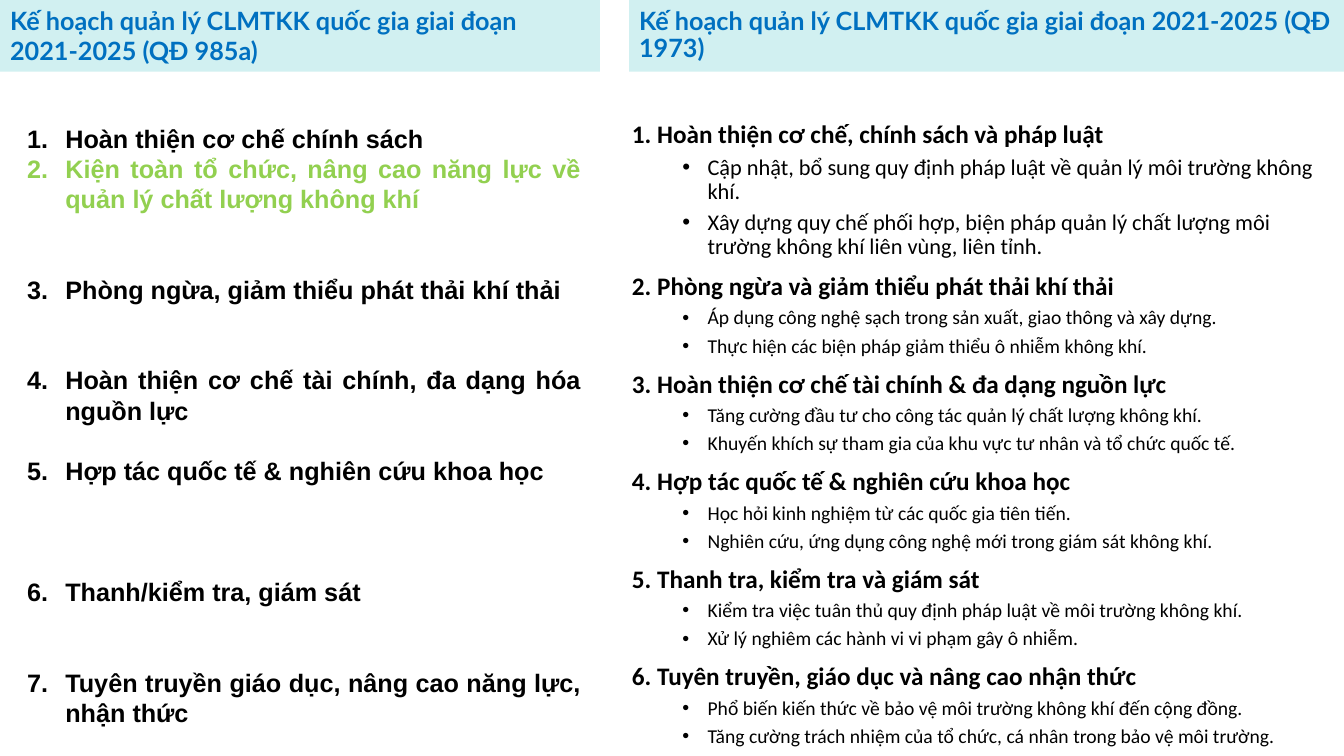
from dataclasses import dataclass

from lxml.etree import SubElement
from pptx import Presentation
from pptx.dml.color import RGBColor
from pptx.enum.shapes import MSO_SHAPE as Preset
from pptx.enum.text import MSO_ANCHOR as Anchor, MSO_AUTO_SIZE as AutoSize, PP_ALIGN as Align
from pptx.oxml.ns import qn
from pptx.util import Inches, Pt

OLD_TITLE = "Kế hoạch quản lý CLMTKK quốc gia giai đoạn 2021-2025 (QĐ 985a)"
NEW_TITLE = "Kế hoạch quản lý CLMTKK quốc gia giai đoạn 2021-2025 (QĐ 1973)"

OLD_TASKS = [
    {"text": "Hoàn thiện cơ chế chính sách", "gap_rows": 0},
    {"text": "Kiện toàn tổ chức, nâng cao năng lực về quản lý chất lượng không khí",
     "gap_rows": 0, "highlight": True},
    {"text": "Phòng ngừa, giảm thiểu phát thải khí thải", "gap_rows": 2},
    {"text": "Hoàn thiện cơ chế tài chính, đa dạng hóa nguồn lực", "gap_rows": 2},
    {"text": "Hợp tác quốc tế & nghiên cứu khoa học", "gap_rows": 1},
    {"text": "Thanh/kiểm tra, giám sát", "gap_rows": 3},
    {"text": "Tuyên truyền giáo dục, nâng cao năng lực, nhận thức", "gap_rows": 2},
]

NEW_TASKS = [
    ("1. Hoàn thiện cơ chế, chính sách và pháp luật", [
        "Cập nhật, bổ sung quy định pháp luật về quản lý môi trường không khí.",
        "Xây dựng quy chế phối hợp, biện pháp quản lý chất lượng môi trường không khí liên vùng, liên tỉnh.",
    ]),
    ("2. Phòng ngừa và giảm thiểu phát thải khí thải", [
        "Áp dụng công nghệ sạch trong sản xuất, giao thông và xây dựng.",
        "Thực hiện các biện pháp giảm thiểu ô nhiễm không khí.",
    ]),
    ("3. Hoàn thiện cơ chế tài chính & đa dạng nguồn lực", [
        "Tăng cường đầu tư cho công tác quản lý chất lượng không khí.",
        "Khuyến khích sự tham gia của khu vực tư nhân và tổ chức quốc tế.",
    ]),
    ("4. Hợp tác quốc tế & nghiên cứu khoa học", [
        "Học hỏi kinh nghiệm từ các quốc gia tiên tiến.",
        "Nghiên cứu, ứng dụng công nghệ mới trong giám sát không khí.",
    ]),
    ("5. Thanh tra, kiểm tra và giám sát", [
        "Kiểm tra việc tuân thủ quy định pháp luật về môi trường không khí.",
        "Xử lý nghiêm các hành vi vi phạm gây ô nhiễm.",
    ]),
    ("6. Tuyên truyền, giáo dục và nâng cao nhận thức", [
        "Phổ biến kiến thức về bảo vệ môi trường không khí đến cộng đồng.",
        "Tăng cường trách nhiệm của tổ chức, cá nhân trong bảo vệ môi trường.",
    ]),
]


@dataclass(frozen=True)
class Theme:
    band: str = "D1F0F1"
    title: str = "0070C0"
    text: str = "000000"
    highlight: str = "92D050"
    title_font: str = "Lato"
    old_font: str = "Arial"
    new_font: str = "Calibri"
    heading_size: int = 18
    first_detail_size: int = 16
    detail_size: int = 14
    row_height: float = 21.6


THEME = Theme()
WIDTH, HEIGHT = 13.33, 7.5
BAND_HEIGHT = 0.71
OLD_BAND = (0, 0, 5.95, BAND_HEIGHT)
NEW_BAND = (6.24, 0, WIDTH - 6.24, BAND_HEIGHT)
OLD_LIST = (0.17, 1.17, 5.69, 6.16)
NEW_LIST = (6.17, 1.16, WIDTH - 6.17, 4.76)


def write(frame, text, *, font, size, color, bold=True, align=Align.LEFT,
          spacing=1.0, before=0, indent=0, hanging=0, bullet=None):
    first = not frame.text
    paragraph = frame.paragraphs[0] if first else frame.add_paragraph()
    properties = paragraph._p.get_or_add_pPr()
    properties.set("marL", str(Inches(indent)))
    properties.set("indent", str(Inches(-hanging)))
    if bullet == "number":
        SubElement(properties, qn("a:buFont"), typeface="+mj-lt")
        SubElement(properties, qn("a:buAutoNum"), type="arabicPeriod")
    elif bullet:
        SubElement(properties, qn("a:buFont"), typeface="Arial")
        SubElement(properties, qn("a:buChar"), char=bullet)
    else:
        SubElement(properties, qn("a:buNone"))
    paragraph.alignment = align
    paragraph.line_spacing = spacing
    paragraph.space_before = Pt(0 if first else before)
    run = paragraph.add_run()
    run.text = text
    run.font.name = font
    run.font.size = Pt(size)
    run.font.bold = bold
    run.font.color.rgb = RGBColor.from_string(color)


def fill_band(shape, text, spacing):
    shape.fill.solid()
    shape.fill.fore_color.rgb = RGBColor.from_string(THEME.band)
    shape.line.fill.background()
    frame = shape.text_frame
    frame.word_wrap = True
    frame.auto_size = AutoSize.NONE
    frame.vertical_anchor = Anchor.MIDDLE
    write(frame, text, font=THEME.title_font, size=THEME.heading_size,
          color=THEME.title, spacing=spacing)


def add_list_frame(slide, box):
    frame = slide.shapes.add_textbox(*map(Inches, box)).text_frame
    frame.word_wrap = True
    return frame


def add_old_tasks(slide):
    frame = add_list_frame(slide, OLD_LIST)
    for task in OLD_TASKS:
        write(frame, task["text"], font=THEME.old_font, size=THEME.heading_size,
              color=THEME.highlight if task.get("highlight") else THEME.text,
              align=Align.JUSTIFY, spacing=Pt(THEME.row_height),
              before=task["gap_rows"] * THEME.row_height,
              indent=0.38, hanging=0.38, bullet="number")


def add_new_tasks(slide):
    frame = add_list_frame(slide, NEW_LIST)
    for index, (heading, details) in enumerate(NEW_TASKS):
        write(frame, heading, font=THEME.new_font, size=THEME.heading_size,
              color=THEME.text, spacing=0.9, before=10, indent=0.25, hanging=0.25)
        for detail in details:
            write(frame, detail, font=THEME.new_font, bold=False, color=THEME.text,
                  size=THEME.detail_size if index else THEME.first_detail_size,
                  spacing=0.9, before=5, indent=0.75, hanging=0.25, bullet="•")


def main():
    presentation = Presentation()
    presentation.slide_width, presentation.slide_height = Inches(WIDTH), Inches(HEIGHT)
    slide = presentation.slides.add_slide(presentation.slide_layouts.get_by_name("Title Only"))

    title = slide.shapes.title
    title.left, title.top, title.width, title.height = map(Inches, OLD_BAND)
    fill_band(title, OLD_TITLE, 1.0)

    new_band = slide.shapes.add_shape(Preset.RECTANGLE, *map(Inches, NEW_BAND))
    new_band.shadow.inherit = False
    fill_band(new_band, NEW_TITLE, 0.9)

    add_old_tasks(slide)
    add_new_tasks(slide)
    presentation.save("out.pptx")


if __name__ == "__main__":
    main()
